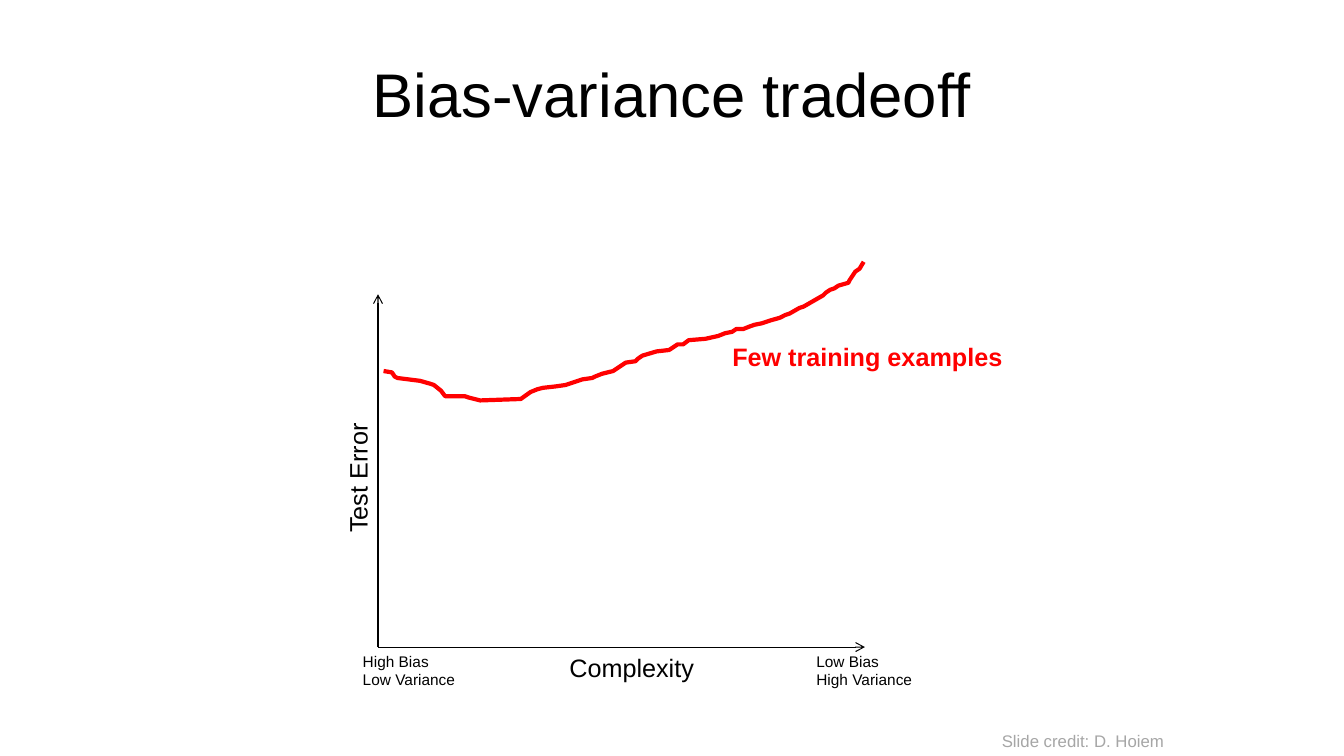
from lxml import etree
from pptx import Presentation
from pptx.dml.color import RGBColor
from pptx.enum.shapes import MSO_CONNECTOR
from pptx.enum.text import MSO_ANCHOR, PP_ALIGN
from pptx.oxml.ns import qn
from pptx.util import Pt

STRAIGHT = MSO_CONNECTOR.STRAIGHT
TOP, MIDDLE = MSO_ANCHOR.TOP, MSO_ANCHOR.MIDDLE
LEFT, CENTER = PP_ALIGN.LEFT, PP_ALIGN.CENTER

BLACK, RED, GREY = "000000", "FF0000", "A6A6A6"
ORIGIN = (270, 462.2)
AXIS_ENDS = [(270, 210.2), (617.8, 462.2)]
ERROR_CURVE = [
    (273.6, 265), (279.5, 266), (281.5, 269.3), (284.4, 270),
    (300.2, 272.2), (306.7, 274.3), (309.6, 275), (315.4, 279.4),
    (318, 282.6), (331.9, 283), (334.8, 284.4), (342.7, 285.8),
    (372.2, 285.1), (378.7, 280.1), (384.5, 277.9), (388.1, 277.2),
    (397.4, 276.5), (403.9, 275), (413.3, 272.2), (416.2, 271.4),
    (422.6, 270), (424.8, 268.6), (429.8, 267.1), (438.5, 265),
    (444.2, 261.4), (447.1, 259.2), (453.6, 257.8), (456.5, 256.3),
    (459.4, 254.2), (469.4, 251.3), (478.1, 249.8), (483.8, 246.2),
    (488.2, 245.5), (491.8, 243.4), (504, 241.9), (513.4, 239.8),
    (517.7, 238.3), (523.4, 236.9), (526.3, 235.4), (530.6, 234.7),
    (536.4, 232.6), (539.3, 231.8), (544.3, 231.1), (550.1, 229),
    (557.3, 226.8), (560.9, 224.6), (563.8, 223.9), (571, 219.6),
    (573.8, 218.9), (587.5, 211), (590.4, 208.8), (593.3, 207.4),
    (596.2, 205.9), (599, 204.5), (605.5, 202.3), (607, 200.2),
    (611.3, 194.4), (614.2, 192.2), (617, 187.2),
]


def rgb(value):
    return RGBColor.from_string(value)


class Deck:
    font = "Arial"

    def __init__(self, width, height):
        self.prs = Presentation()
        self.prs.slide_width, self.prs.slide_height = Pt(width), Pt(height)
        self.s = self.prs.slides.add_slide(self.prs.slide_layouts[6])

    def text(self, lines, x, y, w, h, size, color=BLACK, bold=False,
             align=LEFT, anchor=TOP, wrap=False, rotation=0):
        sp = self.s.shapes.add_textbox(Pt(x), Pt(y), Pt(w), Pt(h))
        sp.rotation = rotation
        tf = sp.text_frame
        tf.word_wrap = wrap
        tf.vertical_anchor = anchor
        tf.text = "\n".join(lines)
        for p in tf.paragraphs:
            p.alignment = align
            p.font.name = self.font
            p.font.size = Pt(size)
            p.font.bold = bold
            p.font.color.rgb = rgb(color)

    def arrow(self, start, end, color=BLACK, width=0.75):
        x1, y1, x2, y2 = (Pt(v) for v in (*start, *end))
        sp = self.s.shapes.add_connector(STRAIGHT, x1, y1, x2, y2)
        sp.line.color.rgb = rgb(color)
        sp.line.width = Pt(width)
        etree.SubElement(sp.line._get_or_add_ln(), qn("a:tailEnd"), type="arrow")
        etree.SubElement(sp._element.spPr, qn("a:effectLst"))

    def curve(self, points, color, width):
        builder = self.s.shapes.build_freeform(*points[0], scale=Pt(1))
        builder.add_line_segments(points[1:], close=False)
        sp = builder.convert_to_shape()
        sp.shadow.inherit = False
        sp.fill.background()
        sp.line.color.rgb = rgb(color)
        sp.line.width = Pt(width)

    def save(self):
        self.prs.save("out.pptx")


def main():
    deck = Deck(960, 540)
    deck.text(["Bias-variance tradeoff"], 48, 21.6, 864, 90, 44,
              align=CENTER, anchor=MIDDLE, wrap=True)
    deck.curve(ERROR_CURVE, RED, 3)
    deck.text(["Few training examples"], 516, 240, 209.5, 29, 18, RED, bold=True)
    for end in AXIS_ENDS:
        deck.arrow(ORIGIN, end)
    deck.text(["Complexity"], 399.6, 462.2, 104.4, 29, 18)
    deck.text(["Low Bias", "High Variance"], 576, 462.2, 84.2, 34, 11)
    deck.text(["High Bias", "Low Variance"], 252, 462.2, 82, 34, 11)
    deck.text(["Test Error"], 208.8, 326.2, 93.6, 29, 18, rotation=270)
    deck.text(["Slide credit: D. Hoiem"], 708.5, 518.4, 131, 21.6, 12, GREY)
    deck.save()


if __name__ == "__main__":
    main()
